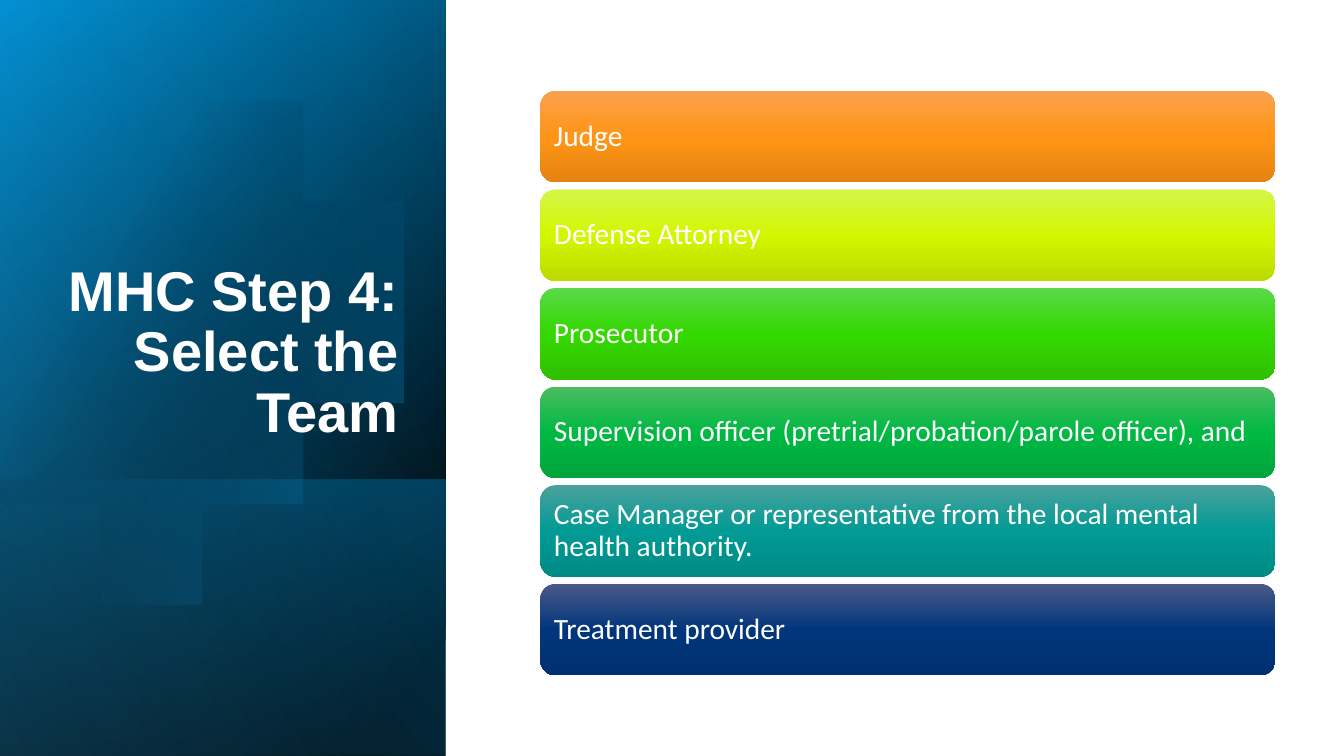
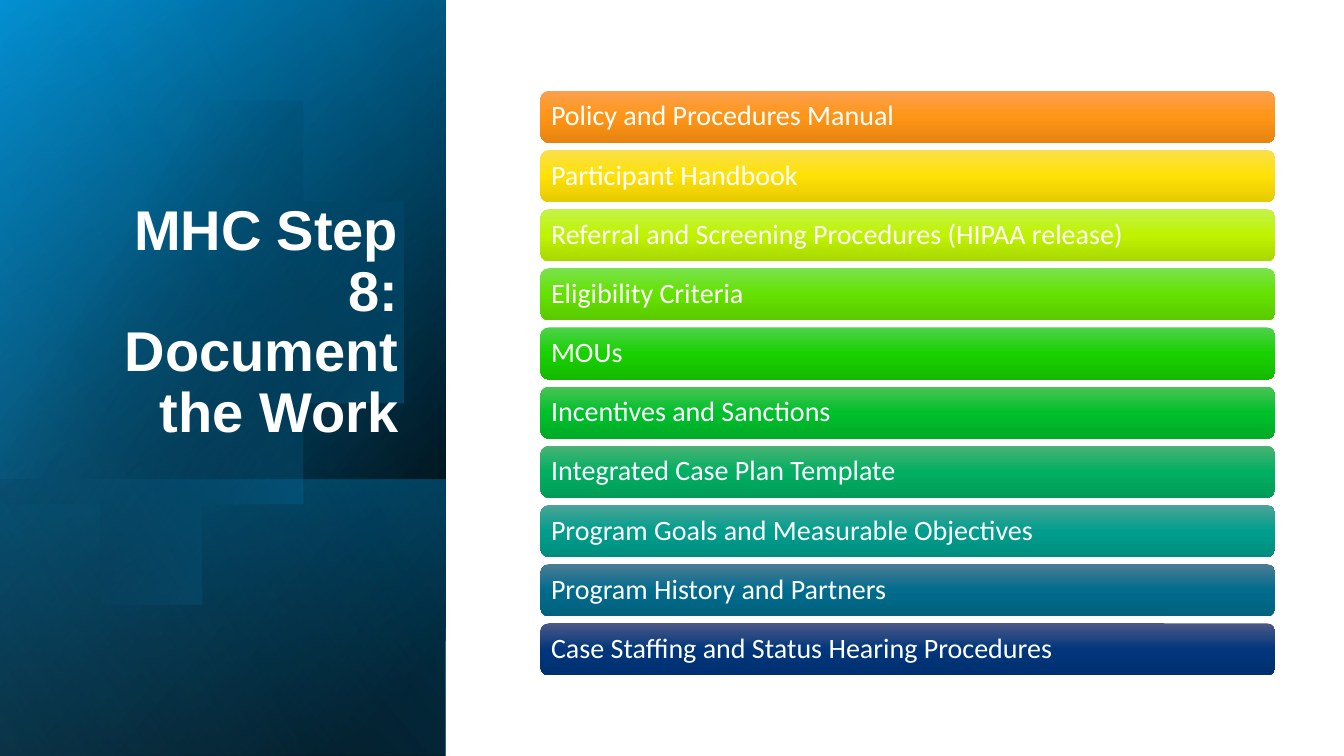
from dataclasses import dataclass
from math import acos, cos, sin

from lxml.etree import SubElement
from pptx import Presentation
from pptx.dml.color import RGBColor
from pptx.enum.shapes import MSO_SHAPE as Preset
from pptx.enum.text import MSO_ANCHOR as Anchor, MSO_AUTO_SIZE as AutoSize, PP_ALIGN as Align
from pptx.oxml.ns import qn
from pptx.util import Inches, Pt

# Shared look
WHITE, BLACK, SKY = "FFFFFF", "000000", "00A9F8"
TITLE_FONT = {"name": "Arial", "size": Pt(40), "bold": True}
PAGE_WIDTH, PAGE_HEIGHT = 13.33, 7.5
PANEL_WIDTH = 4.42
BARS_LEFT, BARS_TOP, BARS_WIDTH, BARS_HEIGHT, BAR_GAP = 5.36, 0.9, 7.29, 5.8, 0.07
DISC_X, DISC_Y, DISC_RADIUS, DISC_STEPS = 1.42, 3.38, 2.29, 120


@dataclass(frozen=True)
class Stop:
    position: int
    color: str
    opacity: int = 100


@dataclass(frozen=True)
class Layer:
    """A gradient strip of the panel, from top down to the page bottom."""
    top: float
    stops: tuple[Stop, ...]
    angle: int


@dataclass(frozen=True)
class Bar:
    text: str
    light: str
    middle: str
    dark: str


@dataclass(frozen=True)
class Page:
    title: str
    title_left: float
    text_size: int
    inset: float
    bars: tuple[Bar, ...]


LAYERS_BELOW = (
    Layer(0, (Stop(8, BLACK), Stop(100, "007FBA")), 50),
    Layer(0, (Stop(0, BLACK, 0), Stop(99, SKY, 46)), 30),
    Layer(4.76, (Stop(2, SKY, 29), Stop(100, BLACK, 30)), 130),
)
DISC_STOPS = (Stop(29, BLACK, 0), Stop(100, SKY, 43))
LAYER_ABOVE = Layer(0, (Stop(0, BLACK, 0), Stop(99, "62CDFF", 11)), 120)

PAGES = (
    Page("MHC Step 4: Select the Team", 0.45, 21, 0.09, (
        Bar("Judge", "FBA04F", "FF9516", "E58411"),
        Bar("Defense Attorney", "D5F64B", "D2F700", "BBDB00"),
        Bar("Prosecutor", "5AD94B", "35D800", "2FC000"),
        Bar("Supervision officer (pretrial/probation/parole officer), and",
            "4BBC61", "00B943", "00A53B"),
        Bar("Case Manager or representative from the local mental health authority.",
            "4BA19C", "019A95", "008A85"),
        Bar("Treatment provider", "4B5987", "01367C", "00306F"),
    )),
    Page("MHC Step 8: Document the Work", 0.64, 20, 0.08, (
        Bar("Policy and Procedures Manual", "FBA04F", "FF9516", "E58411"),
        Bar("Participant Handbook", "FAE04C", "FFE105", "E5CA02"),
        Bar("Referral and Screening Procedures (HIPAA release)", "C4F34B", "BFF300", "AAD800"),
        Bar("Eligibility Criteria", "79E24B", "65E200", "5AC900"),
        Bar("MOUs", "4ED24B", "18D100", "15BA00"),
        Bar("Incentives and Sanctions", "4BC355", "00C02B", "00AB26"),
        Bar("Integrated Case Plan Template", "4BB375", "01AF62", "009C57"),
        Bar("Program Goals and Measurable Objectives", "4BA497", "019E8D", "008D7E"),
        Bar("Program History and Partners", "4B7C95", "016C8D", "00617E"),
        Bar("Case Staffing and Status Hearing Procedures", "4B5987", "01367C", "00306F"),
    )),
)


def rgb(color: str) -> RGBColor:
    return RGBColor.from_string(color)


def set_gradient(shape, stops: tuple[Stop, ...], angle: int) -> None:
    """Fill a shape with a linear gradient, without line or shadow."""
    shape.shadow.inherit = False
    shape.line.fill.background()
    shape.fill.gradient()
    gradient = shape.element.spPr.find(qn("a:gradFill"))
    for child in list(gradient):
        gradient.remove(child)
    stop_list = SubElement(gradient, qn("a:gsLst"))
    for stop in stops:
        mark = SubElement(stop_list, qn("a:gs"), pos=str(stop.position * 1000))
        color = SubElement(mark, qn("a:srgbClr"), val=stop.color)
        if stop.opacity < 100:
            SubElement(color, qn("a:alpha"), val=str(stop.opacity * 1000))
    SubElement(gradient, qn("a:lin"), ang=str(angle * 60000), scaled="0")


def write_text(frame, text: str, font: dict, align: Align, anchor: Anchor) -> None:
    frame.word_wrap = True
    frame.auto_size = AutoSize.NONE
    frame.vertical_anchor = anchor
    para = frame.paragraphs[0]
    para.alignment, para.line_spacing = align, 0.9
    span = para.add_run()
    span.text = text
    for name, value in font.items():
        setattr(span.font, name, value)
    span.font.color.rgb = rgb(WHITE)


def add_layer(slide, layer: Layer) -> None:
    """Draw a strip lying on its side, mirrored and turned upright."""
    length = PAGE_HEIGHT - layer.top
    left = (PANEL_WIDTH - length) / 2
    top = layer.top + (length - PANEL_WIDTH) / 2
    strip = slide.shapes.add_shape(
        Preset.RECTANGLE, Inches(left), Inches(top), Inches(length), Inches(PANEL_WIDTH))
    strip.rotation = 90
    strip.element.spPr.find(qn("a:xfrm")).set("flipH", "1")
    set_gradient(strip, layer.stops, layer.angle)


def add_disc(slide) -> None:
    """Draw the circle that the left page edge cuts off."""
    reach = acos(-DISC_X / DISC_RADIUS)
    turns = [reach * (2 * step / DISC_STEPS - 1) for step in range(DISC_STEPS + 1)]
    points = [(DISC_X + DISC_RADIUS * cos(turn), DISC_Y + DISC_RADIUS * sin(turn))
              for turn in turns]
    builder = slide.shapes.build_freeform(*points[0], scale=Inches(1))
    builder.add_line_segments(points[1:], close=True)
    set_gradient(builder.convert_to_shape(), DISC_STOPS, 30)


def add_panel(slide) -> None:
    for layer in LAYERS_BELOW:
        add_layer(slide, layer)
    add_disc(slide)
    add_layer(slide, LAYER_ABOVE)


def set_title(slide, page: Page) -> None:
    title = slide.shapes.title
    title.left, title.top = Inches(page.title_left), Inches(1.84)
    title.width, title.height = Inches(4.05 - page.title_left), Inches(2.62)
    write_text(title.text_frame, page.title, TITLE_FONT, Align.RIGHT, Anchor.BOTTOM)
    # Bring the title in front of the panel
    title.element.getparent().append(title.element)


def add_bars(slide, page: Page) -> None:
    count = len(page.bars)
    height = (BARS_HEIGHT - BAR_GAP * (count - 1)) / count
    font = {"name": "Calibri", "size": Pt(page.text_size)}
    for index, bar in enumerate(page.bars):
        top = BARS_TOP + index * (height + BAR_GAP)
        box = slide.shapes.add_shape(
            Preset.ROUNDED_RECTANGLE, Inches(BARS_LEFT), Inches(top),
            Inches(BARS_WIDTH), Inches(height))
        set_gradient(box, (Stop(0, bar.light), Stop(50, bar.middle), Stop(100, bar.dark)), 90)
        for side in ("left", "top", "right", "bottom"):
            setattr(box.text_frame, f"margin_{side}", Inches(page.inset))
        write_text(box.text_frame, bar.text, font, Align.LEFT, Anchor.MIDDLE)


def main() -> None:
    deck = Presentation()
    deck.slide_width, deck.slide_height = Inches(PAGE_WIDTH), Inches(PAGE_HEIGHT)
    title_only = deck.slide_layouts[5]
    for page in PAGES:
        slide = deck.slides.add_slide(title_only)
        add_panel(slide)
        set_title(slide, page)
        add_bars(slide, page)
    deck.save("out.pptx")


if __name__ == "__main__":
    main()
